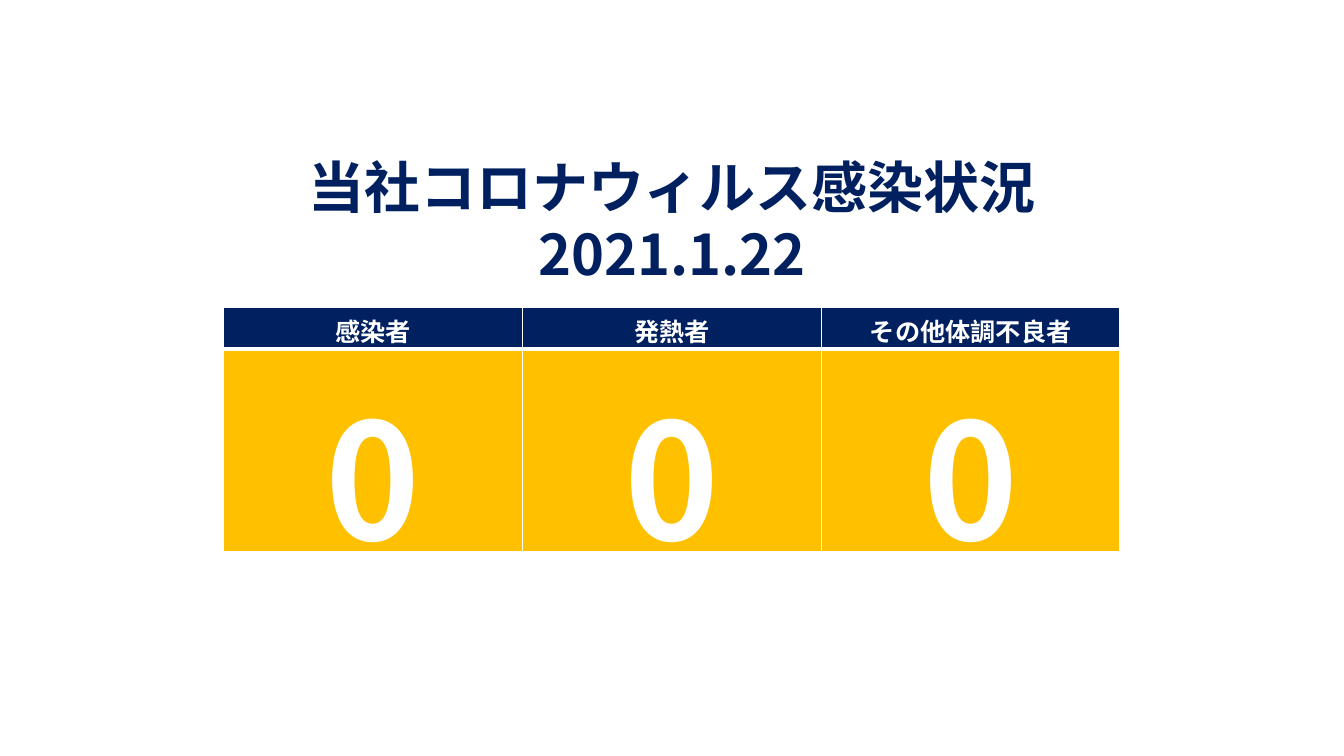
from dataclasses import dataclass

from lxml import etree
from pptx import Presentation
from pptx import util as u
from pptx.dml.color import RGBColor
from pptx.enum import text
from pptx.oxml.ns import qn


@dataclass(frozen=True)
class Theme:
    """Colours, font and type sizes of the slide."""
    navy: str = "002060"
    gold: str = "FFC000"
    white: str = "FFFFFF"
    font: str = "Noto Sans CJK JP"
    title: int = 40
    header: int = 18
    count: int = 115


T = Theme()
TITLE = ["当社コロナウィルス感染状況", "2021.1.22"]
COUNTS = {"感染者": 0, "発熱者": 0, "その他体調不良者": 0}


def style_text(tf, size, color):
    """Centre every paragraph and format its runs in bold."""
    for p in tf.paragraphs:
        p.alignment = text.PP_ALIGN.CENTER
        for r in p.runs:
            r.font.size = u.Pt(size)
            r.font.bold = True
            r.font.color.rgb = RGBColor.from_string(color)
            r.font.name = T.font
            ea = etree.SubElement(r.font._element, qn("a:ea"))
            ea.set("typeface", T.font)


def add_title(s, lines):
    """Fill and place the title placeholder."""
    sp = s.shapes.title
    sp.left, sp.top = u.Inches(2.92), u.Inches(1.46)
    sp.width, sp.height = u.Inches(7.49), u.Inches(1.45)
    tf = sp.text_frame
    tf.text = "\n".join(lines)
    tf.word_wrap = False
    tf.auto_size = text.MSO_AUTO_SIZE.SHAPE_TO_FIT_TEXT
    tf.vertical_anchor = text.MSO_ANCHOR.TOP
    style_text(tf, T.title, T.navy)


def set_borders(cell, widths):
    """Draw white cell borders with the given widths in points."""
    tc_pr = cell._tc.get_or_add_tcPr()
    for i, (side, width) in enumerate(widths.items()):
        ln = etree.Element(qn(f"a:ln{side}"), w=str(u.Pt(width)))
        fill = etree.SubElement(ln, qn("a:solidFill"))
        etree.SubElement(fill, qn("a:srgbClr"), val=T.white)
        tc_pr.insert(i, ln)


def add_counts(s, counts):
    """Add the table of head counts under their labels."""
    heights = [0.41, 2.01]
    table = s.shapes.add_table(
        2, len(counts), u.Inches(2.22), u.Inches(3.05),
        u.Inches(8.89), u.Inches(sum(heights))).table
    rows = [(counts.keys(), T.header, T.navy, {"L": 1, "R": 1, "T": 1, "B": 3}),
            (counts.values(), T.count, T.gold, {"L": 1, "R": 1, "T": 3, "B": 1})]
    for i, (values, size, color, borders) in enumerate(rows):
        table.rows[i].height = u.Inches(heights[i])
        for j, value in enumerate(values):
            cell = table.cell(i, j)
            cell.text_frame.text = str(value)
            style_text(cell.text_frame, size, T.white)
            cell.fill.solid()
            cell.fill.fore_color.rgb = RGBColor.from_string(color)
            set_borders(cell, borders)


def main():
    """Build the infection status slide."""
    prs = Presentation()
    prs.slide_width, prs.slide_height = u.Inches(13.33), u.Inches(7.5)
    s = prs.slides.add_slide(prs.slide_layouts[5])
    add_title(s, TITLE)
    add_counts(s, COUNTS)
    prs.save("out.pptx")


if __name__ == "__main__":
    main()
